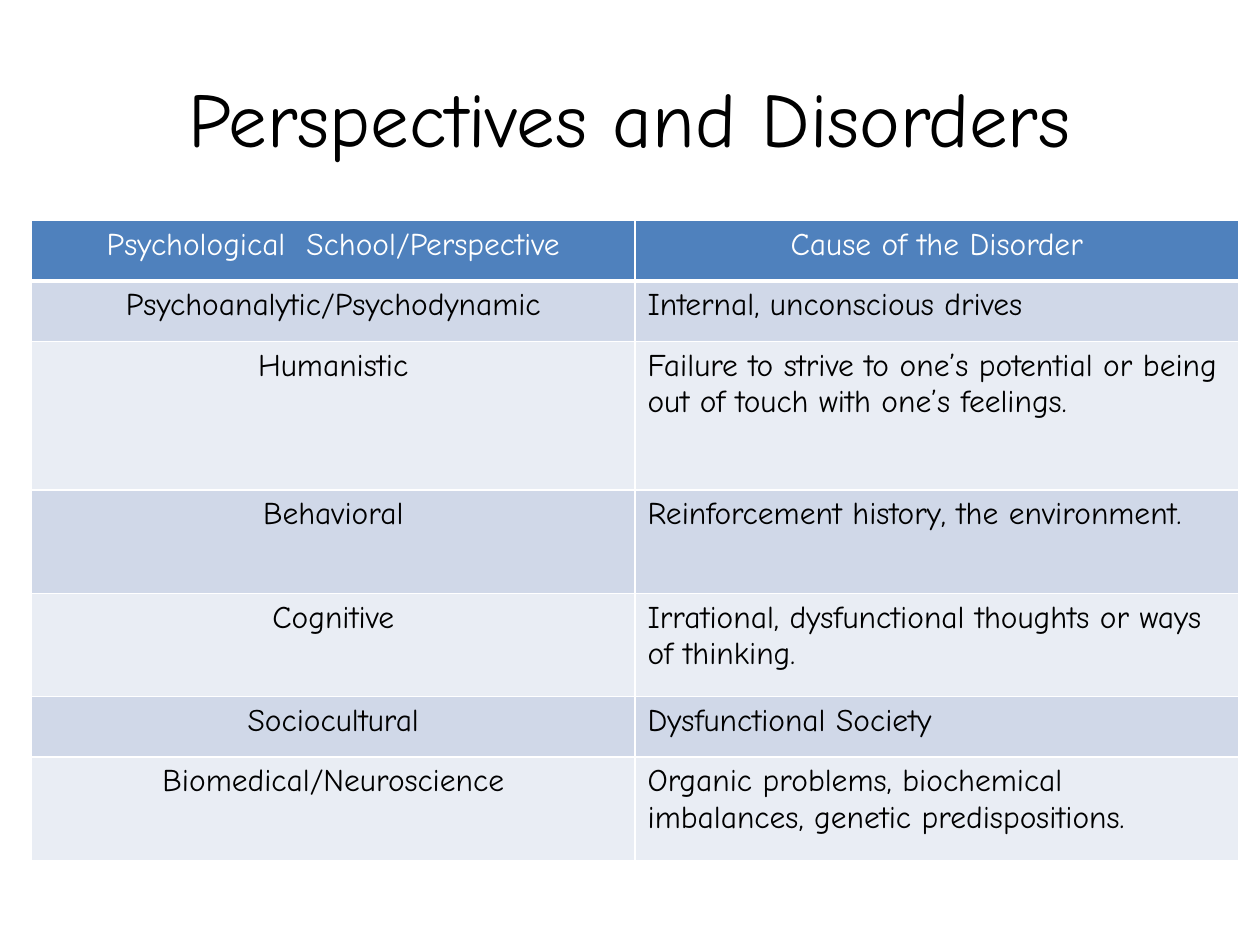
import dataclasses

import pptx
import pptx.dml.color
import pptx.enum.text
import pptx.oxml
import pptx.oxml.ns
import pptx.util

COLORS = {
    "text": "000000",
    "light": "FFFFFF",
    "head": "4F81BD",
    "odd": "D0D8E8",
    "even": "E9EDF4",
}
FONT = "Comic Neue"
UNIT = pptx.util.Inches(0.25)
ALIGN = pptx.enum.text.PP_ALIGN
ANCHOR = pptx.enum.text.MSO_ANCHOR


@dataclasses.dataclass
class Row:
    school: str
    cause: str
    height: float


ROWS = [
    Row("Psychological  School/Perspective", "Cause of the Disorder", 1.92),
    Row("Psychoanalytic/Psychodynamic", "Internal, unconscious drives", 1.92),
    Row("Humanistic", "Failure to strive to one’s potential or being out of touch with one’s feelings.", 4.72),
    Row("Behavioral", "Reinforcement history, the environment.", 3.28),
    Row("Cognitive", "Irrational, dysfunctional thoughts or ways of thinking.", 3.28),
    Row("Sociocultural", "Dysfunctional Society", 1.92),
    Row("Biomedical/Neuroscience", "Organic problems, biochemical imbalances, genetic predispositions.", 3.28),
]


def span(count: float) -> int:
    return round(count * UNIT)


def color(name: str) -> pptx.dml.color.RGBColor:
    return pptx.dml.color.RGBColor.from_string(COLORS[name])


def write(frame, text: str, *, size=18, ink="text", align=ALIGN.LEFT) -> None:
    frame.word_wrap = True
    para = frame.paragraphs[0]
    para.alignment = align
    run = para.add_run()
    run.text = text
    run.font.name = FONT
    run.font.size = pptx.util.Pt(size)
    run.font.bold = False
    run.font.color.rgb = color(ink)


def border(cell, base: float) -> None:
    props = cell._tc.get_or_add_tcPr()
    space = pptx.oxml.ns.nsdecls("a")
    for side, width in {"L": 1, "R": 1, "T": 1, "B": base}.items():
        props.append(pptx.oxml.parse_xml(
            f'<a:ln{side} {space} w="{pptx.util.Pt(width)}"><a:solidFill>'
            f'<a:srgbClr val="{COLORS["light"]}"/></a:solidFill></a:ln{side}>'
        ))


def draw_row(table, index: int, row: Row) -> None:
    head = index == 0
    fill = "head" if head else "odd" if index % 2 else "even"
    table.rows[index].height = span(row.height)
    for col, text in enumerate((row.school, row.cause)):
        cell = table.cell(index, col)
        border(cell, 3 if head else 1)
        cell.fill.solid()
        cell.fill.fore_color.rgb = color(fill)
        write(cell.text_frame, text, ink="light" if head else "text",
              align=ALIGN.CENTER if head or col == 0 else ALIGN.LEFT)


def draw_table(slide) -> None:
    height = sum(row.height for row in ROWS)
    frame = slide.shapes.add_table(
        len(ROWS), 2, span(1), span(7), span(38.32), span(height))
    for index, row in enumerate(ROWS):
        draw_row(frame.table, index, row)


def draw_title(slide) -> None:
    title = slide.shapes.title
    title.left, title.top = span(2), span(1.2)
    title.width, title.height = span(36), span(5)
    title.text_frame.vertical_anchor = ANCHOR.MIDDLE
    write(title.text_frame, "Perspectives and Disorders", size=44, align=ALIGN.CENTER)


def main() -> None:
    deck = pptx.Presentation()
    deck.slide_width, deck.slide_height = span(40), span(30)
    slide = deck.slides.add_slide(deck.slide_layouts[5])
    draw_title(slide)
    draw_table(slide)
    deck.save("out.pptx")


if __name__ == "__main__":
    main()
